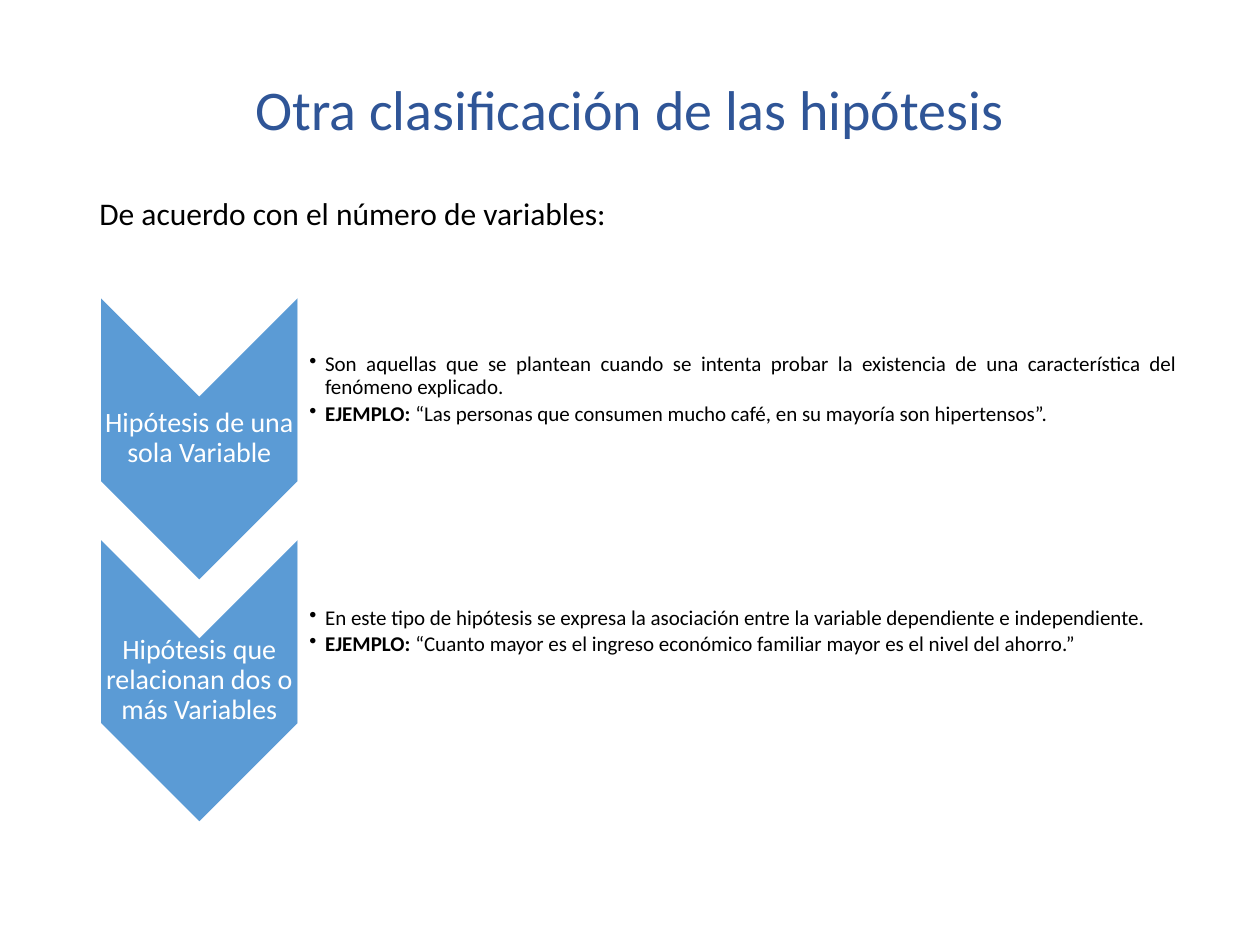
from dataclasses import dataclass

from lxml import etree
from pptx import Presentation
from pptx.dml.color import RGBColor
from pptx.enum.shapes import MSO_SHAPE
from pptx.enum.text import MSO_ANCHOR, PP_ALIGN
from pptx.oxml.ns import qn
from pptx.util import Pt

CHEVRON = MSO_SHAPE.CHEVRON
ROUNDED_TOP = MSO_SHAPE.ROUND_2_SAME_RECTANGLE
MIDDLE, TOP = MSO_ANCHOR.MIDDLE, MSO_ANCHOR.TOP
CENTER, JUSTIFY = PP_ALIGN.CENTER, PP_ALIGN.JUSTIFY


@dataclass(frozen=True)
class Theme:
    font: str = "Calibri"
    title_color: RGBColor = RGBColor(0x2F, 0x55, 0x97)
    accent: RGBColor = RGBColor(0x5B, 0x9B, 0xD5)
    text: RGBColor = RGBColor(0, 0, 0)
    white: RGBColor = RGBColor(0xFF, 0xFF, 0xFF)
    title_size: float = 32
    intro_size: float = 18
    heading_size: float = 16
    body_size: float = 12


class SlideBuilder:
    def __init__(self, slide, theme):
        self.slide = slide
        self.theme = theme

    def format_runs(self, paragraph, size, color):
        for run in paragraph.runs:
            run.font.name = self.theme.font
            run.font.size = Pt(size)
            run.font.color.rgb = color

    def title(self, text, left, top, width, height):
        shape = self.slide.shapes.title
        shape.left, shape.top = Pt(left), Pt(top)
        shape.width, shape.height = Pt(width), Pt(height)
        frame = shape.text_frame
        frame.text = text
        frame.vertical_anchor = MIDDLE
        paragraph = frame.paragraphs[0]
        paragraph.alignment = CENTER
        paragraph.line_spacing = 0.9
        self.format_runs(paragraph, self.theme.title_size, self.theme.title_color)

    def turned_shape(self, kind, center_x, center_y, width, height, color, opacity=100):
        """Add a shape turned a quarter clockwise; width and height are before turning."""
        shape = self.slide.shapes.add_shape(
            kind, Pt(center_x - width / 2), Pt(center_y - height / 2), Pt(width), Pt(height))
        shape.rotation = 90
        shape.shadow.inherit = False
        shape.line.fill.background()
        shape.fill.solid()
        shape.fill.fore_color.rgb = color
        if opacity < 100:
            color_element = shape.fill._xPr.find(qn("a:solidFill"))[0]
            etree.SubElement(color_element, qn("a:alpha"), val=str(opacity * 1000))

    def text_box(self, left, top, width, height, anchor, insets=None):
        frame = self.slide.shapes.add_textbox(
            Pt(left), Pt(top), Pt(width), Pt(height)).text_frame
        frame.word_wrap = True
        frame.vertical_anchor = anchor
        if insets:
            (frame.margin_left, frame.margin_top,
             frame.margin_right, frame.margin_bottom) = map(Pt, insets)
        return frame

    def label(self, text, box, size, color, alignment, anchor, insets=None, line_spacing=1.0):
        frame = self.text_box(*box, anchor, insets)
        frame.text = text
        paragraph = frame.paragraphs[0]
        paragraph.alignment = alignment
        paragraph.line_spacing = line_spacing
        self.format_runs(paragraph, size, color)

    def bullets(self, items, box, insets):
        """Add bullets; each item is a (bold lead, plain text) pair."""
        frame = self.text_box(*box, MIDDLE, insets)
        for index, (lead, text) in enumerate(items):
            paragraph = frame.add_paragraph() if index else frame.paragraphs[0]
            properties = paragraph._p.get_or_add_pPr()
            properties.set("marL", str(Pt(9)))
            properties.set("indent", str(-Pt(9)))
            etree.SubElement(properties, qn("a:buChar"), char="•")
            paragraph.level = 1
            paragraph.alignment = JUSTIFY
            paragraph.line_spacing = 0.9
            paragraph.space_after = Pt(2.2)
            if lead:
                run = paragraph.add_run()
                run.text = lead
                run.font.bold = True
            paragraph.add_run().text = text
            self.format_runs(paragraph, self.theme.body_size, self.theme.text)


HYPOTHESES = [
    ("Hipótesis de una sola Variable", [
        ("", "Son aquellas que se plantean cuando se intenta probar la existencia "
             "de una característica del fenómeno explicado."),
        ("EJEMPLO: ", "“Las personas que consumen mucho café, en su mayoría son hipertensos”."),
    ]),
    ("Hipótesis que relacionan dos o más Variables", [
        ("", "En este tipo de hipótesis se expresa la asociación entre la variable "
             "dependiente e independiente."),
        ("EJEMPLO: ", "“Cuanto mayor es el ingreso económico familiar mayor es el nivel "
                      "del ahorro.”"),
    ]),
]
ROW_PITCH = 138.2
CHEVRON_X, CHEVRON_Y = 113.9, 250.8
CHEVRON_LENGTH, CHEVRON_BREADTH = 160.6, 112.3
HEADING_HEIGHT = 48.2
PANEL_Y, PANEL_HEIGHT, PANEL_WIDTH = 222.7, 104.4, 508.3
BODY_WIDTH, BODY_HEIGHT = 503.3, 94.3


def main():
    presentation = Presentation()
    presentation.slide_width, presentation.slide_height = Pt(720), Pt(540)
    theme = Theme()
    builder = SlideBuilder(
        presentation.slides.add_slide(presentation.slide_layouts[5]), theme)

    builder.title("Otra clasificación de las hipótesis", 49.7, 28.8, 620.6, 70.6)
    column_left = CHEVRON_X - CHEVRON_BREADTH / 2
    panel_left = column_left + CHEVRON_BREADTH
    for row, (heading, items) in enumerate(HYPOTHESES):
        offset = row * ROW_PITCH
        chevron_y, panel_y = CHEVRON_Y + offset, PANEL_Y + offset
        builder.turned_shape(CHEVRON, CHEVRON_X, chevron_y,
                             CHEVRON_LENGTH, CHEVRON_BREADTH, theme.accent)
        builder.label(
            heading,
            (column_left, chevron_y - HEADING_HEIGHT / 2, CHEVRON_BREADTH, HEADING_HEIGHT),
            theme.heading_size, theme.white, CENTER, MIDDLE, (0.8,) * 4, 0.9)
        builder.turned_shape(ROUNDED_TOP, panel_left + PANEL_WIDTH / 2, panel_y,
                             PANEL_HEIGHT, PANEL_WIDTH, theme.white, opacity=90)
        builder.bullets(
            items, (panel_left, panel_y - BODY_HEIGHT / 2, BODY_WIDTH, BODY_HEIGHT),
            (6.7, 0.6, 0.6, 0.6))
    builder.label("De acuerdo con el número de variables:", (49.7, 107.3, 578.9, 28.8),
                  theme.intro_size, theme.text, JUSTIFY, TOP)
    presentation.save("out.pptx")


if __name__ == "__main__":
    main()
